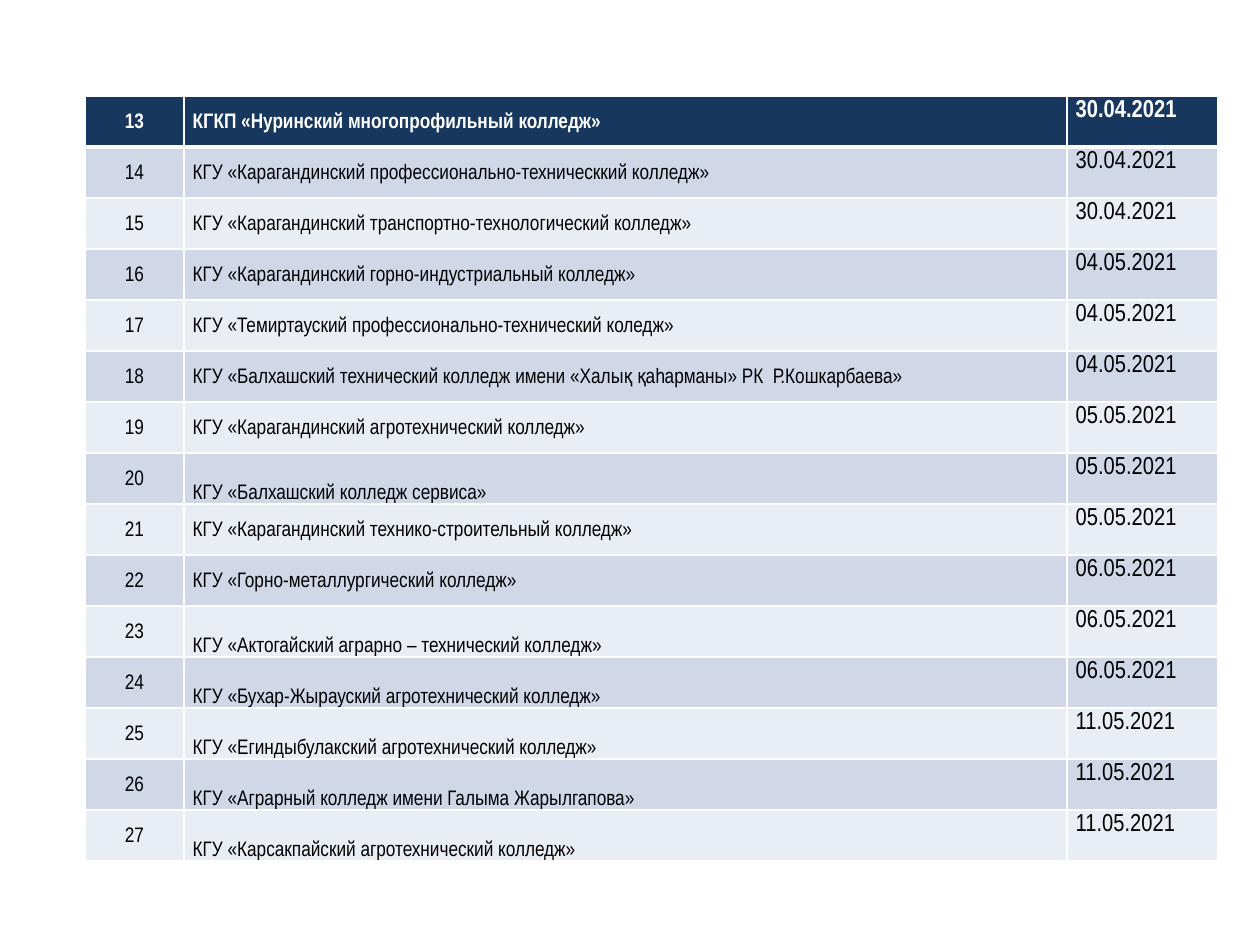
import pptx
import pptx.util
import pptx.dml.color
import pptx.enum.text
import pptx.oxml

PX = 914400 / 126
FIRST_NUMBER = 13
# (college, date)
COLLEGES = [
    ("КГКП «Нуринский многопрофильный колледж»", "30.04.2021"),
    ("КГУ «Карагандинский профессионально-техническкий колледж»", "30.04.2021"),
    ("КГУ «Карагандинский транспортно-технологический колледж»", "30.04.2021"),
    ("КГУ «Карагандинский горно-индустриальный колледж»", "04.05.2021"),
    ("КГУ «Темиртауский профессионально-технический коледж»", "04.05.2021"),
    ("КГУ «Балхашский технический колледж имени «Халық қаһарманы» РК  Р.Кошкарбаева»", "04.05.2021"),
    ("КГУ «Карагандинский агротехнический колледж»", "05.05.2021"),
    ("КГУ «Балхашский колледж сервиса»", "05.05.2021"),
    ("КГУ «Карагандинский технико-строительный колледж»", "05.05.2021"),
    ("КГУ «Горно-металлургический колледж»", "06.05.2021"),
    ("КГУ «Актогайский аграрно – технический колледж»", "06.05.2021"),
    ("КГУ «Бухар-Жырауский агротехнический колледж»", "06.05.2021"),
    ("КГУ «Егиндыбулакский агротехнический колледж»", "11.05.2021"),
    ("КГУ «Аграрный колледж имени Галыма Жарылгапова»", "11.05.2021"),
    ("КГУ «Карсакпайский агротехнический колледж»", "11.05.2021"),
]
BOTTOM_NUMBERS = {20, 23, 24, 25, 26, 27}  # names set at the foot of the cell

LEFT, TOP, ROW_H = 85, 96, 51
COL_W = [99, 883, 151]
HEAD_FILL, BAND_FILLS = "17375E", ["E9EDF4", "D0D8E8"]

ALIGN = pptx.enum.text.PP_ALIGN
ANCHOR = pptx.enum.text.MSO_ANCHOR
CELL = {"margin_left": px_in, "margin_right": px_in, "margin_top": 0, "margin_bottom": 0} \
    if (px_in := pptx.util.Inches(0.07)) else {}
# Paragraph format and text size of each column
COL_PARAGRAPH = [
    {"alignment": ALIGN.CENTER, "line_spacing": 1.15},
    {"alignment": ALIGN.LEFT, "line_spacing": 1.15},
    {"alignment": ALIGN.LEFT, "line_spacing": 1.15, "space_after": pptx.util.Pt(10)},
]
COL_SIZE = [12, 12, 14]


def px(n):
    return pptx.util.Emu(round(n * PX))


def rgb(value):
    return pptx.dml.color.RGBColor.from_string(value)


def apply(target, values):
    for name, value in values.items():
        setattr(target, name, value)


def set_borders(cell, top, bottom):
    tc_pr = cell._tc.get_or_add_tcPr()
    widths = {"lnL": 1, "lnR": 1, "lnT": top, "lnB": bottom}
    for i, (tag, width) in enumerate(widths.items()):
        tc_pr.insert(i, pptx.oxml.parse_xml(
            f'<a:{tag} xmlns:a="http://schemas.openxmlformats.org/drawingml/2006/main" '
            f'w="{pptx.util.Pt(width)}"><a:solidFill><a:srgbClr val="FFFFFF"/>'
            f'</a:solidFill></a:{tag}>'))


def fill_cell(cell, text, row, col, anchor):
    head = row == 0
    apply(cell, {**CELL, "vertical_anchor": anchor})
    cell.fill.solid()
    cell.fill.fore_color.rgb = rgb(HEAD_FILL if head else BAND_FILLS[row % 2])
    set_borders(cell, 3 if row == 1 else 1, 3 if head else 1)
    p = cell.text_frame.paragraphs[0]
    apply(p, COL_PARAGRAPH[col])
    r = p.add_run()
    r.text = text
    apply(r.font, {"name": "Arial Narrow", "size": pptx.util.Pt(COL_SIZE[col]), "bold": head})
    r.font.color.rgb = rgb("FFFFFF" if head else "000000")


def main():
    prs = pptx.Presentation()
    apply(prs, {"slide_width": px(1260), "slide_height": px(945)})
    s = prs.slides.add_slide(prs.slide_layouts[6])

    # Table grid
    n = len(COLLEGES)
    table = s.shapes.add_table(n, len(COL_W), px(LEFT), px(TOP),
                               px(sum(COL_W)), px(n * ROW_H)).table
    apply(table, {"first_row": False, "horz_banding": False})
    for column, width in zip(table.columns, COL_W):
        column.width = px(width)

    # College rows
    for row, (college, date) in enumerate(COLLEGES):
        table.rows[row].height = px(ROW_H)
        number = FIRST_NUMBER + row
        name_anchor = ANCHOR.BOTTOM if number in BOTTOM_NUMBERS else ANCHOR.MIDDLE
        anchors = [ANCHOR.MIDDLE, name_anchor, ANCHOR.TOP]
        for col, text in enumerate([str(number), college, date]):
            fill_cell(table.cell(row, col), text, row, col, anchors[col])

    prs.save("out.pptx")


if __name__ == "__main__":
    main()
